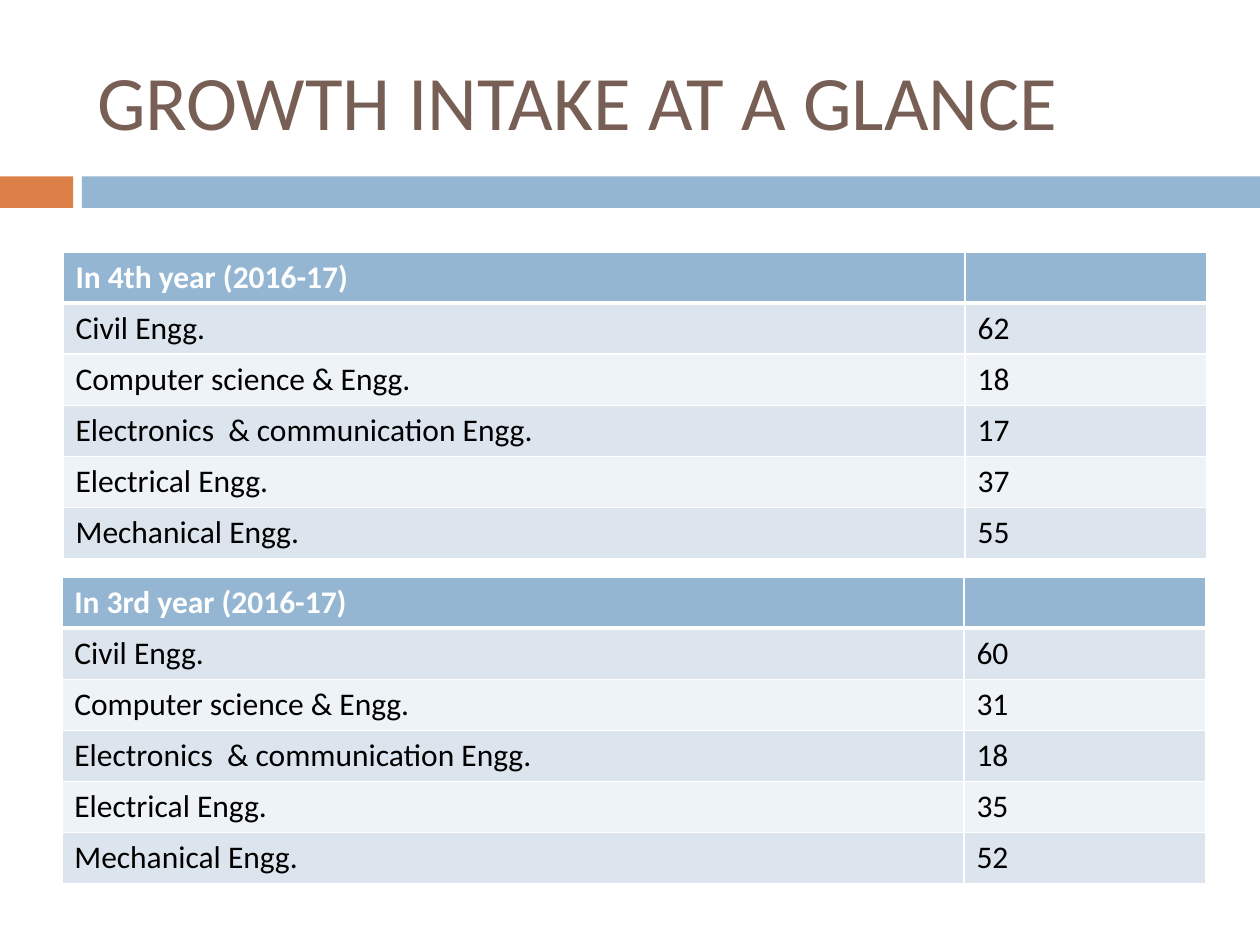
from lxml.etree import SubElement
from pptx import Presentation
from pptx.dml.color import RGBColor
from pptx.enum.shapes import MSO_SHAPE
from pptx.enum.text import MSO_ANCHOR, MSO_AUTO_SIZE, PP_ALIGN
from pptx.oxml.ns import qn
from pptx.util import Inches, Pt

# Content
TITLE = "GROWTH INTAKE AT A GLANCE"
DEPTS = ["Civil Engg.", "Computer science & Engg.",
         "Electronics  & communication Engg.",
         "Electrical Engg.", "Mechanical Engg."]
TABLES = [  # heading, intake by department, left, top
    ("In 4th year (2016-17)", [62, 18, 17, 37, 55], 0.5, 2),
    ("In 3rd year (2016-17)", [60, 31, 18, 35, 52], 0.49, 4.58),
]
BARS = [(0, 0.58, "DD8047"), (0.65, 9.35, "94B6D2")]  # left, width, colour

# Style
FONT = "Calibri"
HEAD, BANDS = "94B6D2", ["DCE5EE", "EEF3F7"]
COLS, ROW = [7.16, 1.92], 0.4


def paint(fill, color):
    fill.solid()
    fill.fore_color.rgb = RGBColor.from_string(color)


def style(frame, size, color, bold=False):
    for para in frame.paragraphs:
        for run in para.runs:
            run.font.name = FONT
            run.font.size = Pt(size)
            run.font.bold = bold
            paint(run.font.fill, color)


def edge(cell, widths):
    """Draw white borders; they must come before the fill in the cell."""
    props = cell._tc.get_or_add_tcPr()
    for side, width in widths.items():
        line = SubElement(props, qn("a:ln" + side), w=str(Pt(width)))
        solid = SubElement(line, qn("a:solidFill"))
        SubElement(solid, qn("a:srgbClr"), val="FFFFFF")


def add_grid(slide, head, counts, left, top):
    rows = [(head, "")] + list(zip(DEPTS, counts))
    grid = slide.shapes.add_table(
        len(rows), len(COLS), Inches(left), Inches(top),
        Inches(sum(COLS)), Inches(ROW * len(rows))).table
    for col, width in zip(grid.columns, COLS):
        col.width = Inches(width)
    for r, row in enumerate(rows):
        for c, value in enumerate(row):
            cell = grid.cell(r, c)
            cell.text_frame.text = str(value)
            style(cell.text_frame, 18, "000000" if r else "FFFFFF", r == 0)
            edge(cell, {"L": 1, "R": 1, "T": 3 if r == 1 else 1,
                        "B": 1 if r else 3})
            paint(cell.fill, BANDS[(r - 1) % 2] if r else HEAD)


deck = Presentation()
deck.slide_width, deck.slide_height = Inches(10), Inches(7.5)
slide = deck.slides.add_slide(deck.slide_layouts[5])

# Title
title = slide.shapes.title
title.left, title.top = Inches(0.67), Inches(0.25)
title.width, title.height = Inches(8.92), Inches(1.08)
frame = title.text_frame
frame.text = TITLE
frame.auto_size = MSO_AUTO_SIZE.NONE
frame.vertical_anchor = MSO_ANCHOR.MIDDLE
frame.paragraphs[0].alignment = PP_ALIGN.LEFT
style(frame, 44, "775F55")

# Bars under the title
for left, width, color in BARS:
    bar = slide.shapes.add_shape(MSO_SHAPE.RECTANGLE, Inches(left),
                                 Inches(1.4), Inches(width), Inches(0.25))
    bar.shadow.inherit = False
    bar.line.fill.background()
    paint(bar.fill, color)

# Intake tables
for item in TABLES:
    add_grid(slide, *item)

deck.save("out.pptx")
